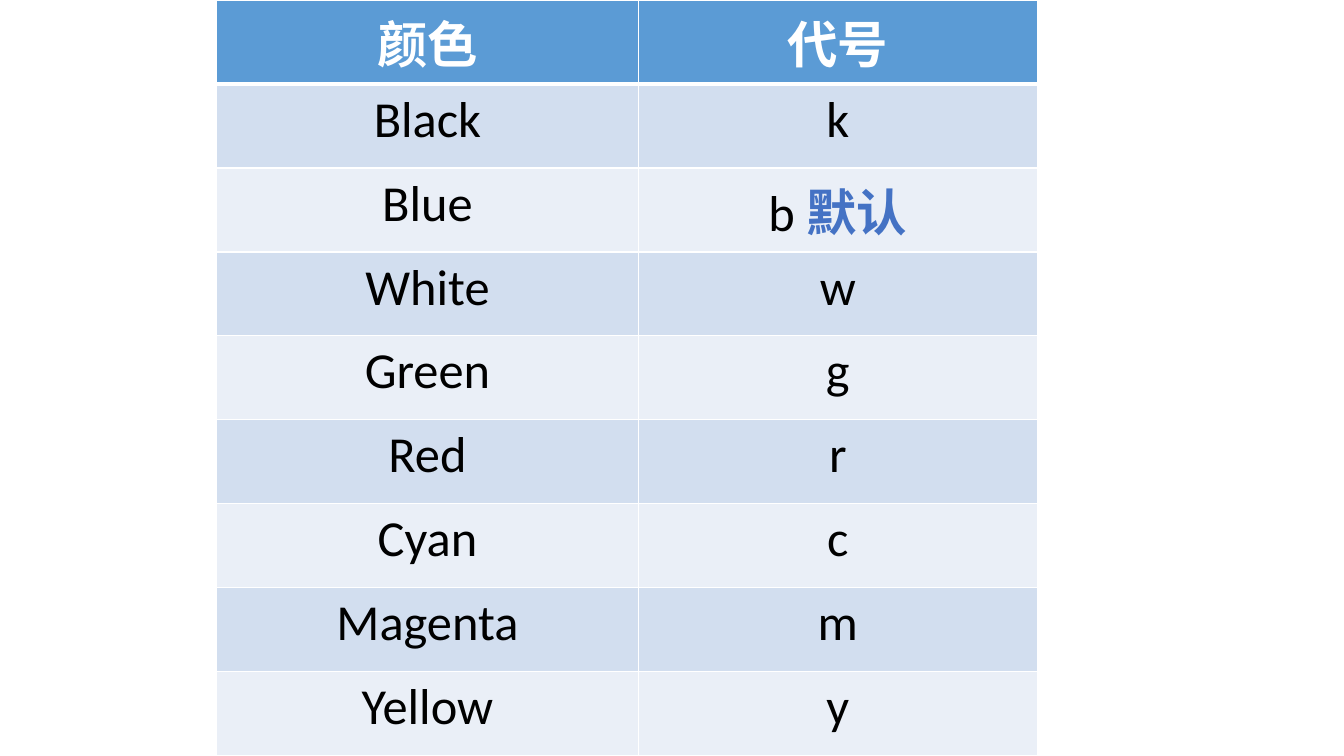
from lxml.etree import SubElement
from pptx import Presentation
from pptx.dml.color import RGBColor
from pptx.enum.text import PP_ALIGN
from pptx.oxml.ns import qn
from pptx.util import Inches, Pt

# Content: each cell is a list of (text, format) runs
HEADER = {"color": "FFFFFF", "bold": True}
DEFAULT_MARK = {"color": "4472C4", "bold": True}
ROWS = [
    ([("颜色", HEADER)], [("代号", HEADER)]),
    ([("Black", {})], [("k", {})]),
    ([("Blue", {})], [("b ", {}), ("默认", DEFAULT_MARK)]),
    ([("White", {})], [("w", {})]),
    ([("Green", {})], [("g", {})]),
    ([("Red", {})], [("r", {})]),
    ([("Cyan", {})], [("c", {})]),
    ([("Magenta", {})], [("m", {})]),
    ([("Yellow", {})], [("y", {})]),
]
COLUMN_WIDTHS = [4.18, 3.96]
TABLE_LEFT = 2.15
SLIDE_WIDTH, SLIDE_HEIGHT = 13.33, 7.5
HEADER_FILL = "5B9BD5"
BAND_FILLS = ["EAEFF7", "D2DEEF"]


def rgb(value):
    return RGBColor.from_string(value)


def add_text(paragraph, text, size=36, font="Calibri", color="000000", bold=False):
    run = paragraph.add_run()
    run.text = text
    run.font.size = Pt(size)
    run.font.name = font
    run.font.bold = bold
    run.font.color.rgb = rgb(color)


def set_borders(cell, top=1, bottom=1, color="FFFFFF"):
    """Draw the four cell borders; call before the fill is set."""
    properties = cell._tc.get_or_add_tcPr()
    for side, width in (("L", 1), ("R", 1), ("T", top), ("B", bottom)):
        line = SubElement(properties, qn(f"a:ln{side}"), w=str(Pt(width)))
        SubElement(SubElement(line, qn("a:solidFill")), qn("a:srgbClr"), val=color)


def main():
    presentation = Presentation()
    presentation.slide_width = Inches(SLIDE_WIDTH)
    presentation.slide_height = Inches(SLIDE_HEIGHT)
    slide = presentation.slides.add_slide(presentation.slide_layouts[6])

    # Table fills the slide height with equal rows
    table = slide.shapes.add_table(
        len(ROWS), len(COLUMN_WIDTHS), Inches(TABLE_LEFT), 0,
        Inches(sum(COLUMN_WIDTHS)), Inches(SLIDE_HEIGHT)).table
    for column, width in zip(table.columns, COLUMN_WIDTHS):
        column.width = Inches(width)

    # Cells: header row, then alternating bands
    for row_index, row in enumerate(ROWS):
        fill = BAND_FILLS[row_index % 2] if row_index else HEADER_FILL
        for column_index, runs in enumerate(row):
            cell = table.cell(row_index, column_index)
            set_borders(cell, top=3 if row_index == 1 else 1,
                        bottom=3 if row_index == 0 else 1)
            cell.fill.solid()
            cell.fill.fore_color.rgb = rgb(fill)
            paragraph = cell.text_frame.paragraphs[0]
            paragraph.alignment = PP_ALIGN.CENTER
            for text, style in runs:
                add_text(paragraph, text, **style)

    presentation.save("out.pptx")


if __name__ == "__main__":
    main()
